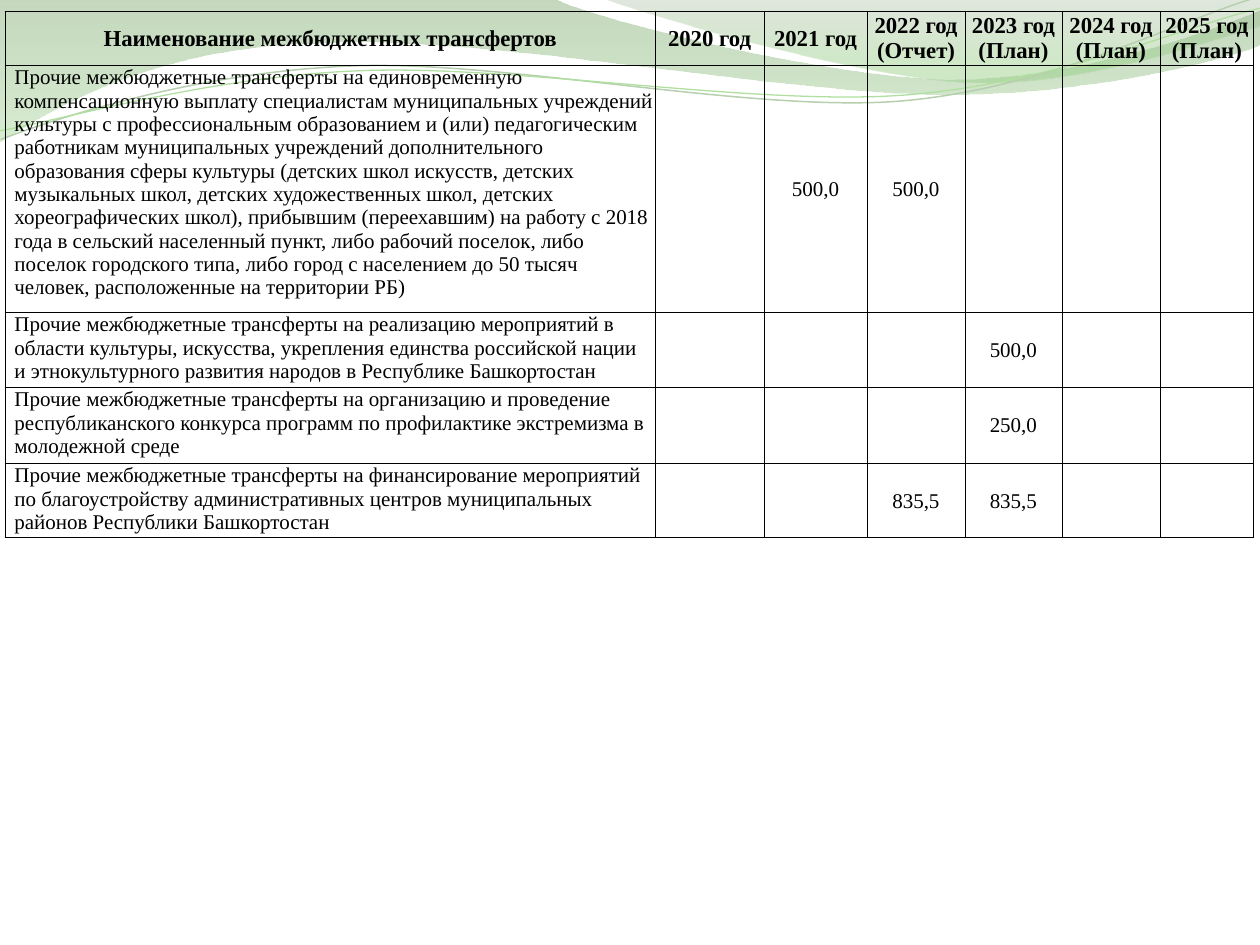
from lxml.etree import SubElement
from pptx import Presentation
from pptx.dml.color import RGBColor
from pptx.enum.text import MSO_ANCHOR, PP_ALIGN
from pptx.oxml import parse_xml
from pptx.oxml.ns import nsdecls, qn
from pptx.util import Emu, Pt

EMU_PER_PX = 914400 / 126
LINE_ROTATION = 357.3
CELL_MARGIN = Pt(0.75)
NAME_INDENT = Pt(5.4)

# Each outline is a list of points: 2 numbers for a line, 6 for a Bezier curve.
FILLED_WAVES = [
    ([(0, 0), (554, -1), (600, 21, 837, 79, 955, 79),
      (1074, 79, 1207, 33, 1260, 11), (1261, 45),
      (1239, 55, 1096, 96, 940, 94), (784, 94, 481, 35, 324, 43),
      (161, 45, 58, 105, -1, 142)],
     [(0, "80AA72", 45), (100, "B7DFAA", 55)]),
    ([(604, -1), (642, 14, 859, 78, 969, 82),
      (1079, 87, 1211, 40, 1260, 26), (1260, 0)],
     [(0, "97B28E", 30), (80, "96D082", 45)]),
]
LINE_WAVES = [
    ([(-2, 110), (58, 90, 199, 52, 350, 53), (499, 53, 745, 118, 896, 114),
      (1049, 109, 1184, 45, 1260, 27)], "B7CFAF", 0.85),
    ([(-2, 101), (57, 94, 207, 57, 357, 58), (509, 58, 750, 112, 902, 108),
      (1052, 104, 1188, 52, 1262, 38)], "B0DFA0", 0.75),
]

COLUMN_WIDTHS = [650, 109, 103, 98, 97, 98, 94]
ROW_HEIGHTS = [54, 247, 75, 76, 75]
HEADER = ["Наименование межбюджетных трансфертов", "2020 год", "2021 год",
          "2022 год (Отчет)", "2023 год (План)", "2024 год (План)", "2025 год (План)"]
TRANSFERS = [
    ["Прочие межбюджетные трансферты на единовременную компенсационную выплату "
     "специалистам муниципальных учреждений культуры с профессиональным образованием "
     "и (или) педагогическим работникам муниципальных учреждений дополнительного "
     "образования сферы культуры (детских школ искусств, детских музыкальных школ, "
     "детских художественных школ, детских хореографических школ), прибывшим "
     "(переехавшим) на работу с 2018 года в сельский населенный пункт, либо рабочий "
     "поселок, либо поселок городского типа, либо город с населением до 50 тысяч "
     "человек, расположенные на территории РБ)",
     "", "500,0", "500,0", "", "", ""],
    ["Прочие межбюджетные трансферты на реализацию мероприятий в области культуры, "
     "искусства, укрепления единства российской нации и этнокультурного развития "
     "народов в Республике Башкортостан",
     "", "", "", "500,0", "", ""],
    ["Прочие межбюджетные трансферты на организацию и проведение республиканского "
     "конкурса программ по профилактике экстремизма в молодежной среде",
     "", "", "", "250,0", "", ""],
    ["Прочие межбюджетные трансферты на финансирование мероприятий по благоустройству "
     "административных центров муниципальных районов Республики Башкортостан",
     "", "", "835,5", "835,5", "", ""],
]


def px(value):
    return Emu(round(value * EMU_PER_PX))


def color(value):
    return RGBColor.from_string(value)


def add_outline(slide, left, top, outline, close):
    """Draw the end points as a freeform, then bend its curved segments."""
    anchors = [(px(left + segment[-2]), px(top + segment[-1])) for segment in outline]
    builder = slide.shapes.build_freeform(*anchors[0])
    builder.add_line_segments(anchors[1:], close=close)
    shape = builder.convert_to_shape()
    shape.shadow.inherit = False
    lines = list(shape.element.iter(qn("a:lnTo")))
    for line, segment in zip(lines, outline[1:]):
        if len(segment) == 6:
            line.tag = qn("a:cubicBezTo")
            line.remove(line[0])
            for x, y in zip(segment[::2], segment[1::2]):
                SubElement(line, qn("a:pt"), x=str(px(left + x) - shape.left),
                           y=str(px(top + y) - shape.top))
    return shape


def fill_gradient(shape, stops):
    """Fill from top to bottom with (position, colour, opacity) stops."""
    stop_xml = "".join(
        f'<a:gs pos="{position * 1000}"><a:srgbClr val="{value}">'
        f'<a:alpha val="{opacity * 1000}"/></a:srgbClr></a:gs>'
        for position, value, opacity in stops)
    gradient = parse_xml(f'<a:gradFill {nsdecls("a")}><a:gsLst>{stop_xml}</a:gsLst>'
                         '<a:lin ang="5400000" scaled="0"/></a:gradFill>')
    shape.element.spPr.find(qn("a:custGeom")).addnext(gradient)


def add_waves(slide, left, top):
    for outline, stops in FILLED_WAVES:
        shape = add_outline(slide, left, top, outline, close=True)
        fill_gradient(shape, stops)
        shape.line.fill.background()
    for outline, line_color, width in LINE_WAVES:
        shape = add_outline(slide, left, top, outline, close=False)
        shape.rotation = LINE_ROTATION
        shape.fill.background()
        shape.line.color.rgb = color(line_color)
        shape.line.width = Pt(width)


def set_borders(cell, line_color="000000", width=0.5):
    properties = cell._tc.get_or_add_tcPr()
    for position, side in enumerate(("lnL", "lnR", "lnT", "lnB")):
        line = parse_xml(f'<a:{side} {nsdecls("a")} w="{Pt(width)}"/>')
        fill = SubElement(line, qn("a:solidFill"))
        SubElement(fill, qn("a:srgbClr"), val=line_color)
        properties.insert(position, line)


def write_text(cell, text, size=12, bold=False, align=PP_ALIGN.CENTER,
               anchor=MSO_ANCHOR.MIDDLE, indent=CELL_MARGIN):
    cell.margin_left, cell.margin_right = indent, CELL_MARGIN
    cell.margin_top, cell.margin_bottom = CELL_MARGIN, 0
    cell.vertical_anchor = anchor
    paragraph = cell.text_frame.paragraphs[0]
    paragraph.alignment = align
    run = paragraph.add_run()
    run.text = text
    run.font.name = "Times New Roman"
    run.font.size = Pt(size)
    run.font.bold = bold
    run.font.color.rgb = color("000000")


def add_transfer_table(slide, left, top):
    frame = slide.shapes.add_table(len(ROW_HEIGHTS), len(COLUMN_WIDTHS), px(left), px(top),
                                   px(sum(COLUMN_WIDTHS)), px(sum(ROW_HEIGHTS)))
    table = frame.table
    table.first_row = table.horz_banding = False
    for column, width in zip(table.columns, COLUMN_WIDTHS):
        column.width = px(width)
    for row, height in zip(table.rows, ROW_HEIGHTS):
        row.height = px(height)
    for row_index, texts in enumerate([HEADER] + TRANSFERS):
        for column_index, text in enumerate(texts):
            cell = table.cell(row_index, column_index)
            cell.fill.background()
            set_borders(cell)
            if row_index == 0:
                write_text(cell, text, size=13, bold=True)
            elif column_index == 0:
                write_text(cell, text, align=PP_ALIGN.LEFT, anchor=MSO_ANCHOR.TOP,
                           indent=NAME_INDENT)
            elif text:
                write_text(cell, text)


def main():
    presentation = Presentation()
    presentation.slide_width, presentation.slide_height = px(1260), px(945)
    slide = presentation.slides.add_slide(presentation.slide_layouts[6])
    slide.background.fill.solid()
    slide.background.fill.fore_color.rgb = color("FFFFFF")
    add_waves(slide, 0, 0)
    add_transfer_table(slide, 5, 11)
    presentation.save("out.pptx")


if __name__ == "__main__":
    main()
